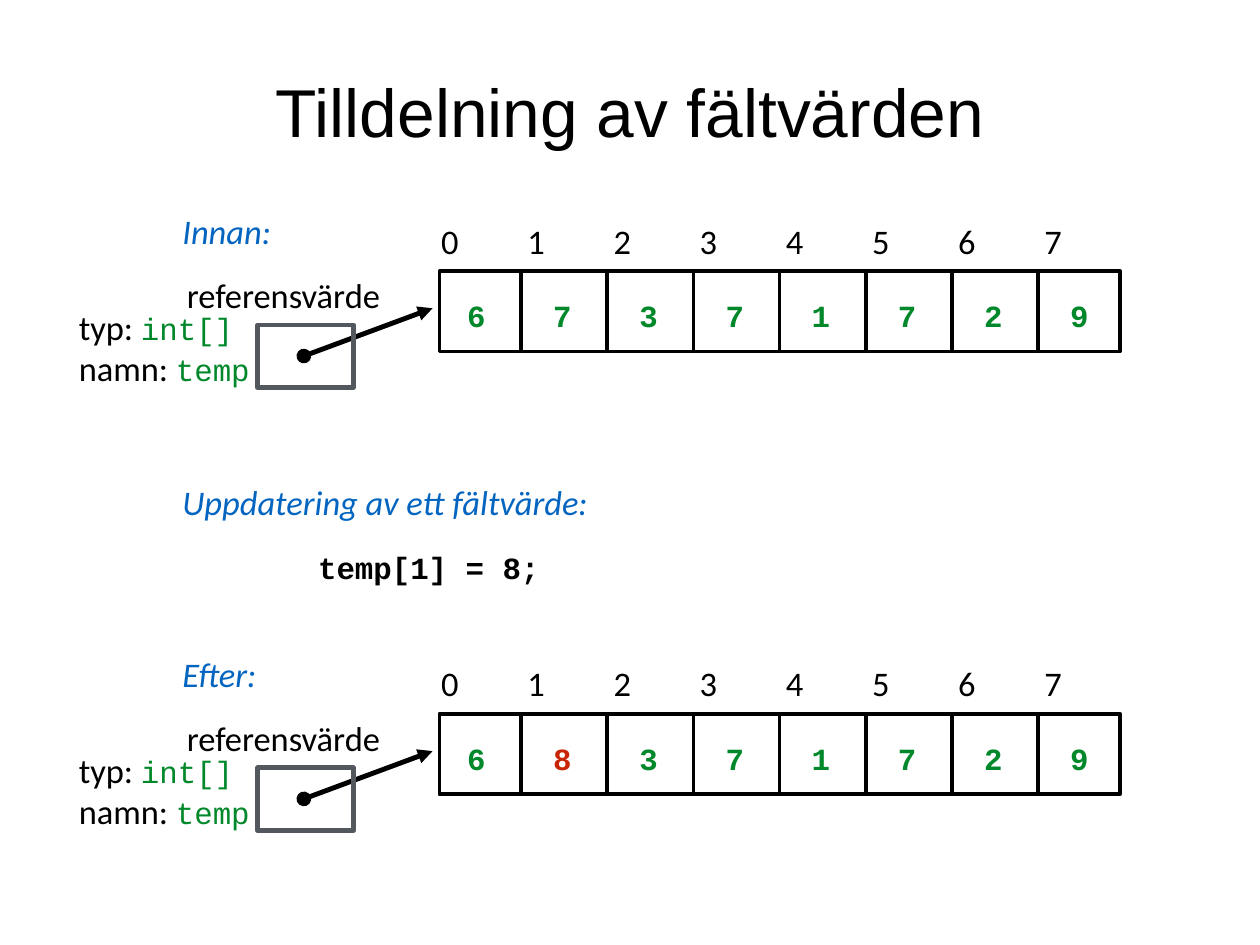
from dataclasses import dataclass

from lxml import etree
from pptx import Presentation
from pptx.dml.color import RGBColor
from pptx.enum import shapes, text
from pptx.oxml import ns
from pptx.util import Cm, Pt


@dataclass(frozen=True)
class Theme:
    black: str = "000000"
    blue: str = "0365C0"
    green: str = "00882B"
    red: str = "C82506"
    grey: str = "53585F"
    title_font: str = "Arial"
    body_font: str = "Calibri"
    code_font: str = "Courier New"
    title_size: int = 55
    body_size: int = 28
    code_size: int = 25
    grid_line: int = 3
    reference_line: int = 4


THEME = Theme()
CELL_PITCH = 2.47
BEFORE_TOP = 6.02
UPDATE_TOP = 13.79
AFTER_TOP = 18.72


def style(run, font, size, color, bold=False, italic=False):
    run.font.name = font
    run.font.size = Pt(size)
    run.font.color.rgb = RGBColor.from_string(color)
    run.font.bold = bold
    run.font.italic = italic


def style_body(run, color=THEME.black, italic=False):
    style(run, THEME.body_font, THEME.body_size, color, italic=italic)


def style_code(run, color=THEME.green, bold=False):
    style(run, THEME.code_font, THEME.code_size, color, bold=bold)


def clear_margins(frame):
    frame.margin_left = frame.margin_right = 0
    frame.margin_top = frame.margin_bottom = 0
    frame.word_wrap = True


def add_paragraph(slide, left, top, width, height):
    box = slide.shapes.add_textbox(Cm(left), Cm(top), Cm(width), Cm(height))
    clear_margins(box.text_frame)
    return box.text_frame.paragraphs[0]


def add_label(slide, wording, left, top, width, color=THEME.black, italic=False):
    label = add_paragraph(slide, left, top, width, 1.43)
    label.text = wording
    style_body(label.runs[0], color, italic)


def add_heading(slide, wording, top):
    add_label(slide, wording, 5.23, top, 19.4, THEME.blue, italic=True)


def add_code(slide, wording, left, top, width, color):
    box = slide.shapes.add_textbox(Cm(left), Cm(top), Cm(width), Cm(1.14))
    clear_margins(box.text_frame)
    box.text_frame.vertical_anchor = text.MSO_ANCHOR.MIDDLE
    box.text_frame.text = wording
    style_code(box.text_frame.paragraphs[0].runs[0], color, bold=True)


def add_declaration(slide, caption, code, top):
    declaration = add_paragraph(slide, 2.26, top, 31.57, 1.43)
    for wording, styler in ((caption, style_body), (code, style_code)):
        run = declaration.add_run()
        run.text = wording
        styler(run)


def add_frame(slide, left, top, width, height, color, weight):
    frame = slide.shapes.add_shape(
        shapes.MSO_SHAPE.RECTANGLE, Cm(left), Cm(top), Cm(width), Cm(height))
    frame.shadow.inherit = False
    frame.fill.background()
    frame.line.color.rgb = RGBColor.from_string(color)
    frame.line.width = Pt(weight)


def add_line(slide, start, end, weight, ends=()):
    line = slide.shapes.add_connector(
        shapes.MSO_CONNECTOR.STRAIGHT, *map(Cm, start + end))
    line.line.color.rgb = RGBColor.from_string(THEME.black)
    line.line.width = Pt(weight)
    properties = line._element.spPr
    for tag, kind in ends:
        etree.SubElement(properties.find(ns.qn("a:ln")), ns.qn(tag), type=kind)
    etree.SubElement(properties, ns.qn("a:effectLst"))


def add_reference(slide, top):
    add_label(slide, "referensvärde", 5.36, top + 1.83, 9.73)
    add_line(slide, (8.71, top + 4.19), (12.4, top + 2.82), THEME.reference_line,
             (("a:headEnd", "oval"), ("a:tailEnd", "triangle")))
    add_frame(slide, 7.39, top + 3.3, 2.74, 1.8, THEME.grey, THEME.reference_line)
    add_declaration(slide, "namn: ", "temp", top + 3.94)
    add_declaration(slide, "typ: ", "int[]", top + 2.77)


def add_array(slide, values, top, changed=None):
    add_frame(slide, 12.6, top + 1.75, 19.51, 2.31, THEME.black, THEME.grid_line)
    for index, value in enumerate(values):
        shift = index * CELL_PITCH
        add_label(slide, str(index), 12.65 + shift, top + 0.28, 1.63)
        color = THEME.red if index == changed else THEME.green
        add_code(slide, str(value), 13.39 + shift, top + 2.46, 0.81, color)
        if index:
            divider = 12.47 + shift
            add_line(slide, (divider, top + 4.04), (divider, top + 1.78),
                     THEME.grid_line)


def add_state(slide, heading, values, top, changed=None):
    add_heading(slide, heading, top)
    add_array(slide, values, top, changed)
    add_reference(slide, top)


def add_title(slide, wording):
    title = slide.shapes.title
    title.left, title.top, title.width, title.height = map(
        Cm, (0.18, 0.18, 35.76, 5.99))
    frame = title.text_frame
    frame.text = wording
    clear_margins(frame)
    frame.vertical_anchor = text.MSO_ANCHOR.MIDDLE
    frame.paragraphs[0].alignment = text.PP_ALIGN.CENTER
    style(frame.paragraphs[0].runs[0], THEME.title_font, THEME.title_size, THEME.black)


def main():
    deck = Presentation()
    deck.slide_width, deck.slide_height = Cm(36.12), Cm(27.1)
    slide = deck.slides.add_slide(deck.slide_layouts[5])
    add_title(slide, "Tilldelning av fältvärden")
    add_state(slide, "Innan:", (6, 7, 3, 7, 1, 7, 2, 9), BEFORE_TOP)
    add_heading(slide, "Uppdatering av ett fältvärde:", UPDATE_TOP)
    add_code(slide, "temp[1] = 8;", 9.12, UPDATE_TOP + 1.91, 6.63, THEME.black)
    add_state(slide, "Efter:", (6, 8, 3, 7, 1, 7, 2, 9), AFTER_TOP, changed=1)
    deck.save("out.pptx")


if __name__ == "__main__":
    main()
